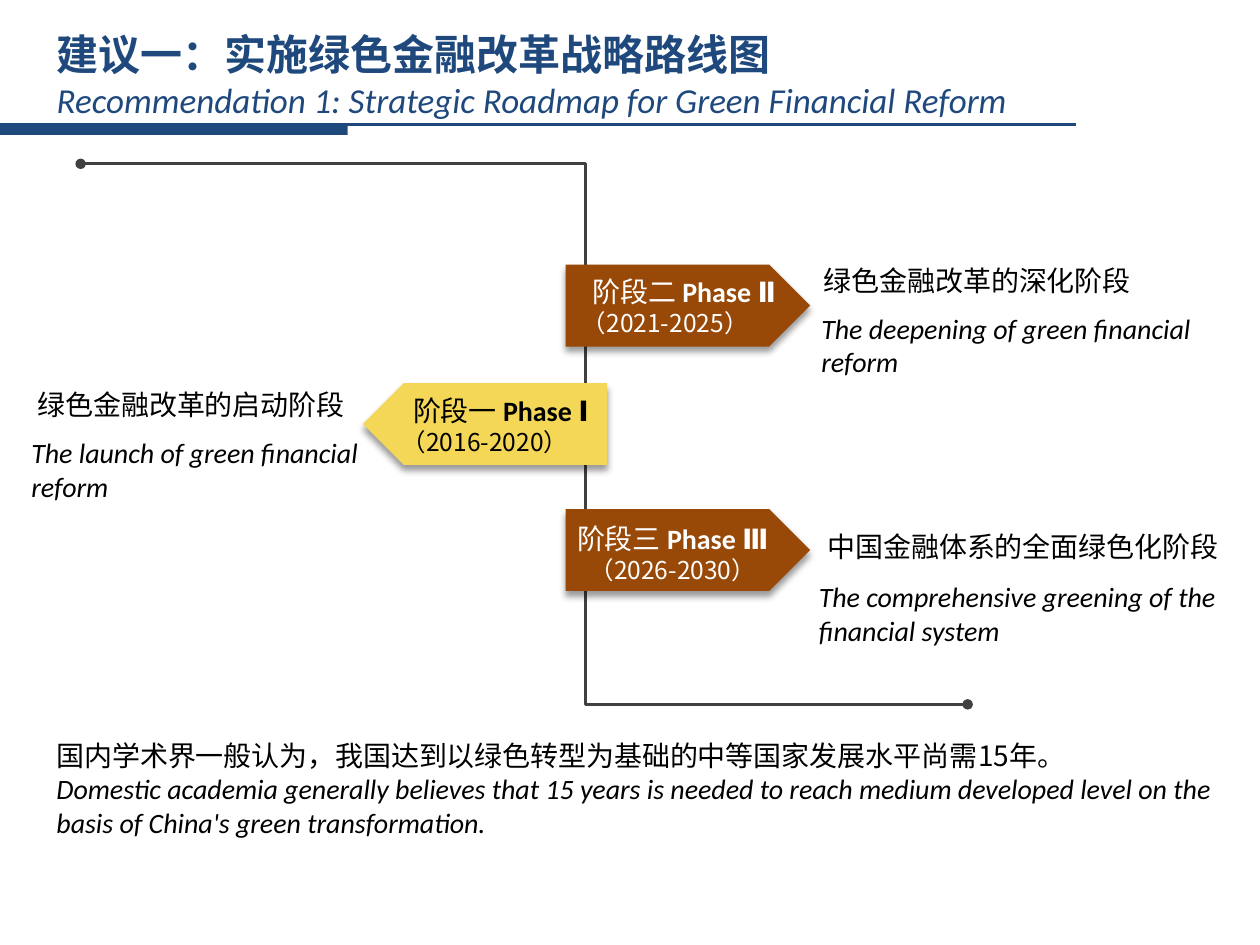
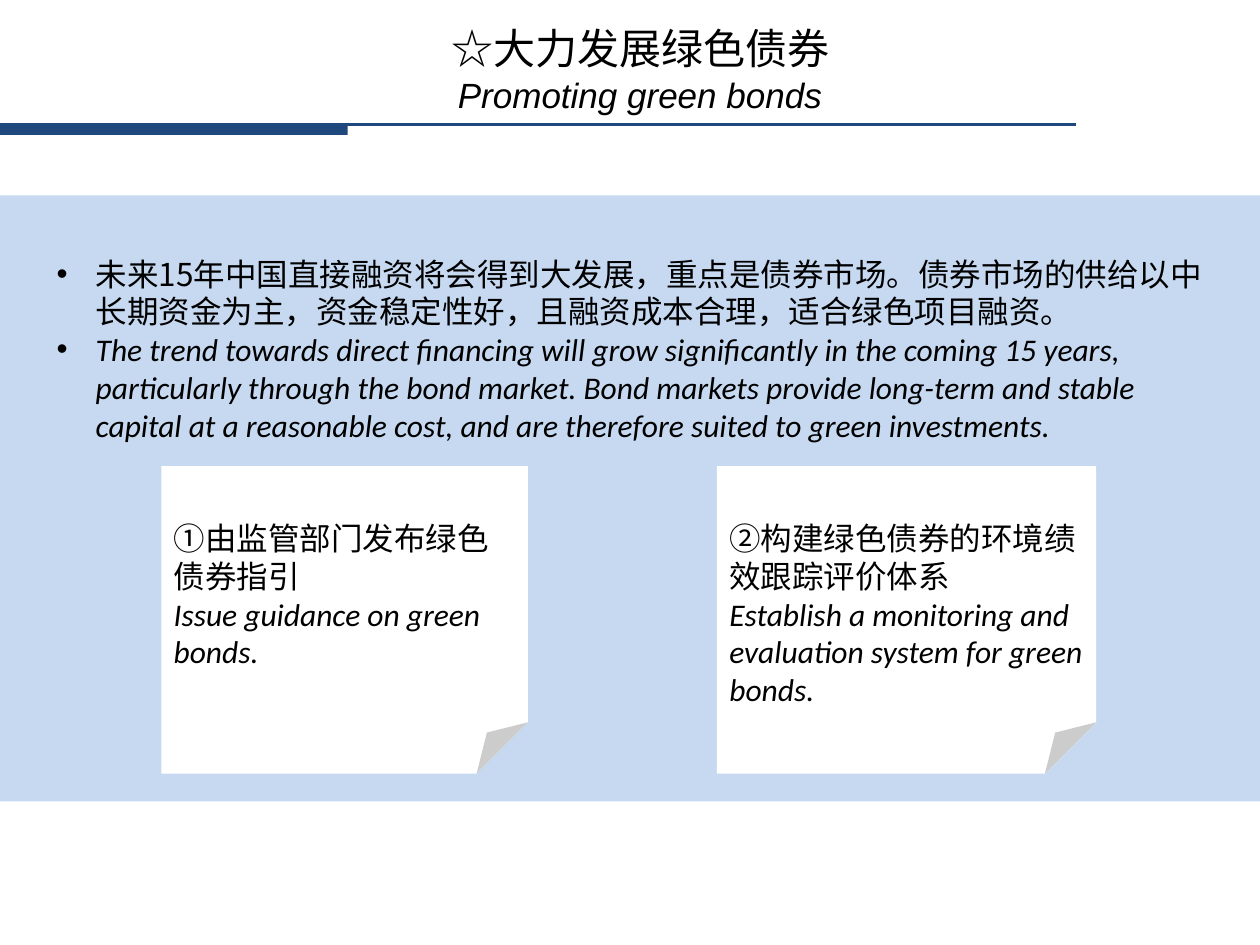
from dataclasses import dataclass

import pptx
import pptx.dml.color
import pptx.enum.shapes
import pptx.enum.text
import pptx.oxml.ns
import pptx.util
from lxml import etree

SHAPE = pptx.enum.shapes.MSO_SHAPE
CONNECTOR = pptx.enum.shapes.MSO_CONNECTOR
ANCHOR = pptx.enum.text.MSO_ANCHOR
AUTO_SIZE = pptx.enum.text.MSO_AUTO_SIZE
CENTER = pptx.enum.text.PP_ALIGN.CENTER
LEFT = pptx.enum.text.PP_ALIGN.LEFT
qn = pptx.oxml.ns.qn

SLIDE_WIDTH = pptx.util.Inches(10)
SLIDE_HEIGHT = pptx.util.Inches(7.5)
COLUMNS, ROWS = 100, 75


@dataclass(frozen=True)
class Theme:
    navy: str = "1F497D"
    brown: str = "984807"
    yellow: str = "F4D756"
    pale_blue: str = "C6D9F1"
    white: str = "FFFFFF"
    black: str = "000000"
    gray: str = "404040"
    chinese: str = "Noto Sans CJK SC"
    english: str = "Calibri"
    plain: str = "Arial"
    heading: int = 24
    subheading: int = 20
    body: int = 18
    label: int = 16
    years: int = 14


THEME = Theme()


# Grid and colour helpers
def grid(column, row):
    return round(SLIDE_WIDTH * column / COLUMNS), round(SLIDE_HEIGHT * row / ROWS)


def area(left, top, width, height):
    return *grid(left, top), *grid(width, height)


def rgb(color):
    return pptx.dml.color.RGBColor.from_string(color)


# Text
def style(run, size, color=THEME.black, font=THEME.chinese, bold=False, italic=False):
    run.font.size = pptx.util.Pt(size)
    run.font.bold, run.font.italic = bold, italic
    run.font.color.rgb = rgb(color)
    run.font.name = font
    east_asian = etree.SubElement(run.font._element, qn("a:ea"))
    east_asian.set("typeface", THEME.chinese)


def write(frame, lines, align=LEFT):
    """Fill a frame with (text, style options) lines."""
    frame.text = "\n".join(text for text, _ in lines)
    for paragraph, (_, options) in zip(frame.paragraphs, lines):
        paragraph.alignment = align
        paragraph.space_before = pptx.util.Pt(0)
        for run in paragraph.runs:
            style(run, **options)


def bilingual(chinese, english, size):
    return [(chinese, dict(size=size)),
            (english, dict(size=size, font=THEME.english, italic=True))]


def add_text(slide, place, lines):
    frame = slide.shapes.add_textbox(*area(*place)).text_frame
    frame.word_wrap = True
    write(frame, lines)
    frame.auto_size = AUTO_SIZE.SHAPE_TO_FIT_TEXT


def set_placeholder(placeholder, place, lines, align=LEFT, anchor=ANCHOR.TOP):
    (placeholder.left, placeholder.top,
     placeholder.width, placeholder.height) = area(*place)
    frame = placeholder.text_frame
    frame.auto_size = AUTO_SIZE.NONE
    frame.vertical_anchor = anchor
    write(frame, lines, align)


# Shapes
def add_block(slide, kind, place, color):
    block = slide.shapes.add_shape(kind, *area(*place))
    block.shadow.inherit = False
    block.fill.solid()
    block.fill.fore_color.rgb = rgb(color)
    block.line.fill.background()
    return block


def add_line(slide, kind, start, end, color):
    line = slide.shapes.add_connector(kind, *grid(*start), *grid(*end))
    line.line.color.rgb = rgb(color)
    line.line.width = pptx.util.Pt(1.5)
    etree.SubElement(line.element.spPr, qn("a:effectLst"))
    return line


def add_header_rule(slide):
    add_line(slide, CONNECTOR.STRAIGHT, (0, 9.9), (85.4, 9.9), THEME.navy)
    add_block(slide, SHAPE.RECTANGLE, (0, 9.9, 27.6, 0.8), THEME.navy)


def add_spine(slide):
    """Bent line with a dot at each end, turning at 56.9% of its width."""
    spine = add_line(slide, CONNECTOR.ELBOW, (6.4, 13), (76.8, 55.9), THEME.gray)
    properties = spine.element.spPr
    adjustments = next(properties.iter(qn("a:avLst")))
    bend = etree.SubElement(adjustments, qn("a:gd"))
    bend.set("name", "adj1")
    bend.set("fmla", "val 56900")
    stroke = properties.find(qn("a:ln"))
    for end in ("a:headEnd", "a:tailEnd"):
        etree.SubElement(stroke, qn(end)).set("type", "oval")


def add_signpost(slide, left, top, color, points_left):
    signpost = add_block(slide, SHAPE.PENTAGON, (left, top, 19.4, 6.5), color)
    if points_left:
        signpost.element.spPr.find(qn("a:xfrm")).set("flipH", "1")
    effects = signpost.element.spPr.find(qn("a:effectLst"))
    shadow = etree.SubElement(effects, qn("a:outerShdw"))
    shadow.set("blurRad", str(pptx.util.Pt(4)))
    shadow.set("dist", str(pptx.util.Pt(3)))
    shadow.set("dir", "5400000")
    shadow.set("rotWithShape", "0")
    tint = etree.SubElement(shadow, qn("a:srgbClr"))
    tint.set("val", THEME.black)
    etree.SubElement(tint, qn("a:alpha")).set("val", "40000")


def add_phase_label(slide, place, chinese, english, years, color, years_align):
    frame = slide.shapes.add_textbox(*area(*place)).text_frame
    frame.word_wrap = False
    frame.text = f"{chinese} \n{years}"
    name, period = frame.paragraphs
    name.alignment, period.alignment = CENTER, years_align
    style(name.runs[0], THEME.label, color)
    phase = name.add_run()
    phase.text = english
    style(phase, THEME.label, color, THEME.english, bold=True)
    style(period.runs[0], THEME.years, color)
    frame.auto_size = AUTO_SIZE.SHAPE_TO_FIT_TEXT


def add_card(slide, left, width, chinese, english):
    card = add_block(slide, SHAPE.FOLDED_CORNER, (left, 37, width, 24.4), THEME.white)
    frame = card.text_frame
    frame.word_wrap = True
    frame.vertical_anchor = ANCHOR.TOP
    frame.margin_top = pptx.util.Inches(0.42)
    write(frame, bilingual(chinese, english, THEME.body))


# Slides
def build_roadmap(deck):
    slide = deck.slides.add_slide(deck.slide_layouts.get_by_name("Title Only"))
    add_header_rule(slide)
    set_placeholder(slide.shapes.title, (3.5, 2.8, 81.1, 6.2), [
        ("建议一：实施绿色金融改革战略路线图",
         dict(size=THEME.heading, color=THEME.navy, bold=True)),
        ("Recommendation 1: Strategic Roadmap for Green Financial Reform",
         dict(size=THEME.subheading, color=THEME.navy, font=THEME.english, italic=True)),
    ], anchor=ANCHOR.MIDDLE)

    add_spine(slide)
    for left, top, color, points_left in (
            (44.9, 21, THEME.brown, False),
            (44.9, 40.4, THEME.brown, False),
            (28.8, 30.4, THEME.yellow, True)):
        add_signpost(slide, left, top, color, points_left)

    # Label boxes leave spare width so that each phase name stays on one line
    add_phase_label(slide, (30.9, 30.7, 17.7, 6.1), "阶段一", "Phase Ⅰ",
                    "（2016-2020）", THEME.black, LEFT)
    add_phase_label(slide, (45.2, 21.3, 18.2, 6.1), "阶段二", "Phase Ⅱ",
                    "（2021-2025）", THEME.white, LEFT)
    add_phase_label(slide, (43.4, 40.9, 20, 6.1), "阶段三", "Phase Ⅲ",
                    "（2026-2030）", THEME.white, CENTER)

    # What each phase is about
    for chinese, chinese_place, english, english_place in (
            ("绿色金融改革的启动阶段", (2, 30.3, 33.1, 3.7),
             "The launch of green financial reform", (1.5, 34.1, 32.8, 6.4)),
            ("绿色金融改革的深化阶段", (64.4, 20.4, 28, 3.7),
             "The deepening of green financial reform", (64.2, 24.2, 31.7, 6.4)),
            ("中国金融体系的全面绿色化阶段", (64.7, 41.5, 33.6, 3.7),
             "The comprehensive greening of the financial system",
             (64, 45.5, 34.3, 6.4))):
        chinese_line, english_line = bilingual(chinese, english, THEME.label)
        add_text(slide, chinese_place, [chinese_line])
        add_text(slide, english_place, [english_line])

    add_text(slide, (3.5, 58.1, 94.7, 9.1), bilingual(
        "国内学术界一般认为，我国达到以绿色转型为基础的中等国家发展水平尚需15年。",
        "Domestic academia generally believes that 15 years is needed to reach medium "
        "developed level on the basis of China's green transformation.", THEME.label))


def build_green_bonds(deck):
    slide = deck.slides.add_slide(deck.slide_layouts.get_by_name("Title and Content"))
    add_header_rule(slide)
    set_placeholder(slide.shapes.title, (8.3, 1.3, 85, 8.4), [
        ("☆大力发展绿色债券", dict(size=THEME.heading)),
        ("Promoting green bonds",
         dict(size=THEME.subheading, font=THEME.plain, italic=True)),
    ], align=CENTER)

    # Panel behind the bullets
    trend = slide.placeholders[1]
    panel = add_block(slide, SHAPE.RECTANGLE, (0, 15.5, COLUMNS, 48.1), THEME.pale_blue)
    trend.element.addprevious(panel.element)

    set_placeholder(trend, (3.5, 19.7, 93.7, 19.2), bilingual(
        "未来15年中国直接融资将会得到大发展，重点是债券市场。债券市场的供给以中长期资金为主，"
        "资金稳定性好，且融资成本合理，适合绿色项目融资。",
        "The trend towards direct financing will grow significantly in the coming 15 years, "
        "particularly through the bond market. Bond markets provide long-term and stable "
        "capital at a reasonable cost, and are therefore suited to green investments.",
        THEME.body))
    hanging = pptx.util.Inches(0.31)
    for paragraph in trend.text_frame.paragraphs:
        properties = paragraph._p.get_or_add_pPr()
        properties.set("marL", str(hanging))
        properties.set("indent", str(-hanging))

    add_card(slide, 12.8, 29.1, "①由监管部门发布绿色债券指引",
             "Issue guidance on green bonds.")
    add_card(slide, 56.9, 30.1, "②构建绿色债券的环境绩效跟踪评价体系",
             "Establish a monitoring and evaluation system for green bonds.")


def main():
    deck = pptx.Presentation()
    deck.slide_width, deck.slide_height = SLIDE_WIDTH, SLIDE_HEIGHT
    build_roadmap(deck)
    build_green_bonds(deck)
    deck.save("out.pptx")


if __name__ == "__main__":
    main()
